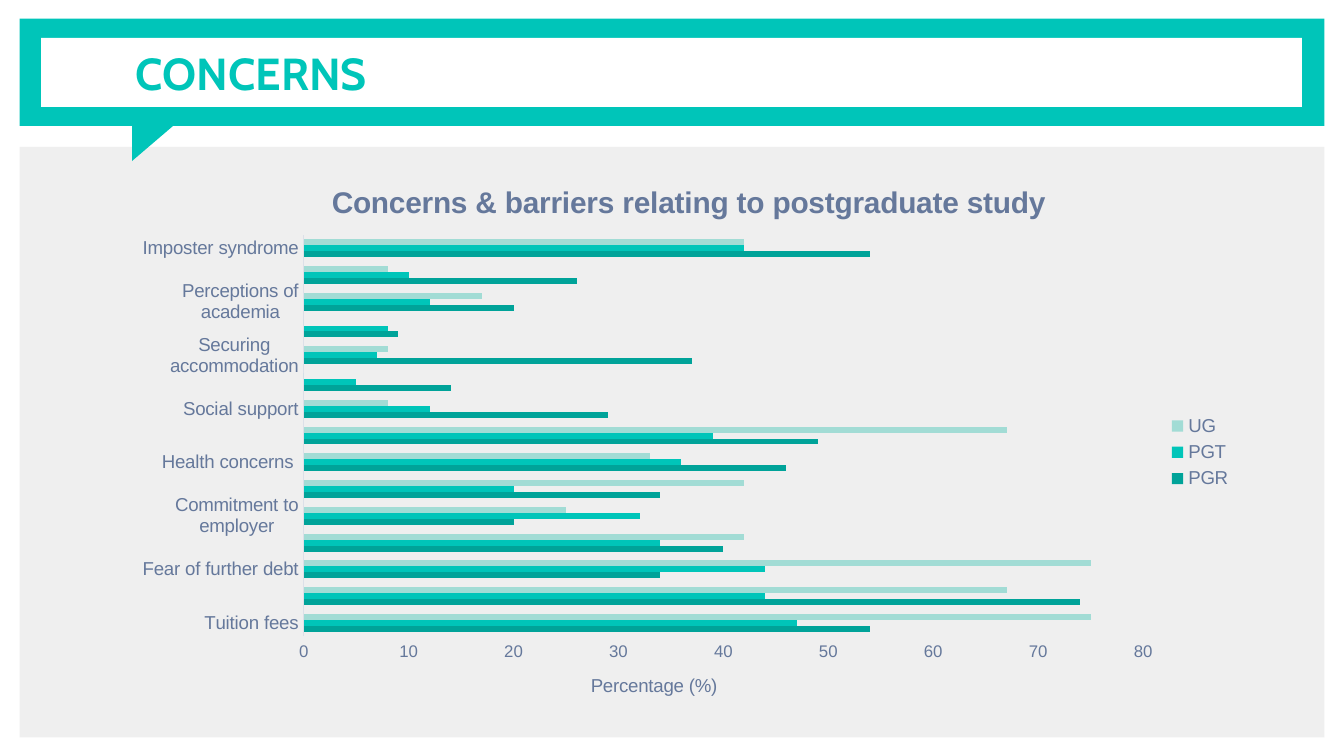
from lxml import etree
from pptx import Presentation
from pptx.chart.data import CategoryChartData
from pptx.dml.color import RGBColor
from pptx.enum.chart import XL_CHART_TYPE as ChartType, XL_LEGEND_POSITION as LegendPosition
from pptx.enum.chart import XL_TICK_MARK as TickMark
from pptx.enum.shapes import MSO_SHAPE as Shape
from pptx.enum.text import MSO_ANCHOR as Anchor, PP_ALIGN as Align
from pptx.oxml.ns import qn
from pptx.util import Pt

TEAL = RGBColor(0x00, 0xC5, 0xB9)
DARK_TEAL = RGBColor(0x00, 0xA3, 0x99)
PALE_TEAL = RGBColor(0xA2, 0xDC, 0xD5)
SLATE = RGBColor(0x65, 0x78, 0x9B)
AXIS_GREY = RGBColor(0xDC, 0xE0, 0xE8)
PANEL_GREY = RGBColor(0xEF, 0xEF, 0xEF)
WHITE = RGBColor(0xFF, 0xFF, 0xFF)


def style_font(font, color, **values):
    font.color.rgb = color
    for name, value in values.items():
        setattr(font, name, value)


def set_layout(parent, index, **fractions):
    """Fix a chart part at fractions of the chart's width and height."""
    layout = parent.find(qn("c:layout"))
    if layout is None:
        layout = etree.Element(qn("c:layout"))
        parent.insert(index, layout)
    manual = etree.SubElement(layout, qn("c:manualLayout"))
    if "w" in fractions:
        etree.SubElement(manual, qn("c:layoutTarget")).set("val", "inner")
    for mode in ("xMode", "yMode"):
        etree.SubElement(manual, qn(f"c:{mode}")).set("val", "edge")
    for name, value in fractions.items():
        etree.SubElement(manual, qn(f"c:{name}")).set("val", str(value))


prs = Presentation()
prs.slide_width, prs.slide_height = Pt(720), Pt(405)
slide = prs.slides.add_slide(prs.slide_layouts[5])

# Grey panel and speech-bubble header
for kind, box, color, rotation in (
    (Shape.RECTANGLE, (10.5, 78.75, 699, 316.25), PANEL_GREY, 0),
    (Shape.RECTANGLE, (10.5, 10, 699, 57.5), TEAL, 0),
    (Shape.RIGHT_TRIANGLE, (72.9, 58.3, 25.8, 30.2), TEAL, 90),
    (Shape.RECTANGLE, (22, 20.25, 675.5, 37), WHITE, 0),
):
    part = slide.shapes.add_shape(kind, *map(Pt, box))
    part.rotation = rotation
    part.shadow.inherit = False
    part.fill.solid()
    part.fill.fore_color.rgb = color
    part.line.fill.background()

# Title, brought in front of the header
title = slide.shapes.title
slide.shapes._spTree.append(title._element)
title.left, title.top, title.width, title.height = map(Pt, (65.5, 10, 626.5, 57.5))
title_frame = title.text_frame
title_format = dict(text="CONCERNS", vertical_anchor=Anchor.MIDDLE, margin_left=Pt(7.2),
                    margin_right=Pt(7.2), margin_top=Pt(7.2), margin_bottom=Pt(7.2))
for name, value in title_format.items():
    setattr(title_frame, name, value)
title_frame.paragraphs[0].alignment = Align.LEFT
style_font(title_frame.paragraphs[0].runs[0].font, TEAL, name="Cabin", size=Pt(24), bold=True)

# Concerns by level of study, from the bottom of the chart upwards; every other row is unlabelled
concerns = (
    ("Tuition fees", 54, 47, 75),
    ("", 74, 44, 67),
    ("Fear of further debt", 34, 44, 75),
    ("", 40, 34, 42),
    ("Commitment to employer", 20, 32, 25),
    ("", 34, 20, 42),
    ("Health concerns ", 46, 36, 33),
    ("", 49, 39, 67),
    ("Social support", 29, 12, 8),
    ("", 14, 5, 0),
    ("Securing accommodation", 37, 7, 8),
    ("", 9, 8, 0),
    ("Perceptions of academia", 20, 12, 17),
    ("", 26, 10, 8),
    ("Imposter syndrome", 54, 42, 42),
)
categories, *level_values = zip(*concerns)
levels = (("PGR", DARK_TEAL), ("PGT", TEAL), ("UG", PALE_TEAL))
data = CategoryChartData()
data.categories = categories
for (level, _), values in zip(levels, level_values):
    data.add_series(level, values)

chart = slide.shapes.add_chart(
    ChartType.BAR_CLUSTERED, *map(Pt, (65.5, 86.4, 607.7, 303.1)), data).chart
style_font(chart.font, SLATE, name="Arial", size=Pt(10))
plot = chart.plots[0]
plot.gap_width, plot.overlap, plot.vary_by_categories = 150, 0, False
for series, (_, color) in zip(plot.series, levels):
    series.format.fill.solid()
    series.format.fill.fore_color.rgb = color
    series.invert_if_negative = False

chart.has_title = True
chart.has_legend = True
chart.legend.position = LegendPosition.RIGHT
chart.legend.include_in_layout = False
style_font(chart.legend.font, SLATE, name="Arial", size=Pt(10))
set_layout(chart.legend._element, 1, x=0.92, y=0.44)

concern_axis, percent_axis = chart.category_axis, chart.value_axis
for axis, size in ((concern_axis, 10), (percent_axis, 9)):
    axis.has_major_gridlines = False
    axis.major_tick_mark = axis.minor_tick_mark = TickMark.NONE
    style_font(axis.tick_labels.font, SLATE, name="Arial", size=Pt(size))
concern_axis.format.line.color.rgb = AXIS_GREY
concern_axis.format.line.width = Pt(0.75)
percent_axis.format.line.fill.background()
percent_axis.minimum_scale, percent_axis.maximum_scale, percent_axis.major_unit = 0, 80, 10
percent_axis.has_title = True

for heading, text, size, bold, x, y in (
    (chart.chart_title, "Concerns & barriers relating to postgraduate study", 16, True, 0.18, 0.03),
    (percent_axis.axis_title, "Percentage (%)", 10, False, 0.41, 0.9),
):
    heading.text_frame.text = text
    style_font(heading.text_frame.paragraphs[0].runs[0].font, SLATE,
               name="Arial", size=Pt(size), bold=bold)
    set_layout(heading._element, 1, x=x, y=y)
chart.chart_title.include_in_layout = False
set_layout(plot._element.getparent(), 0, x=0.16, y=0.13, w=0.74, h=0.71)

prs.save("out.pptx")
